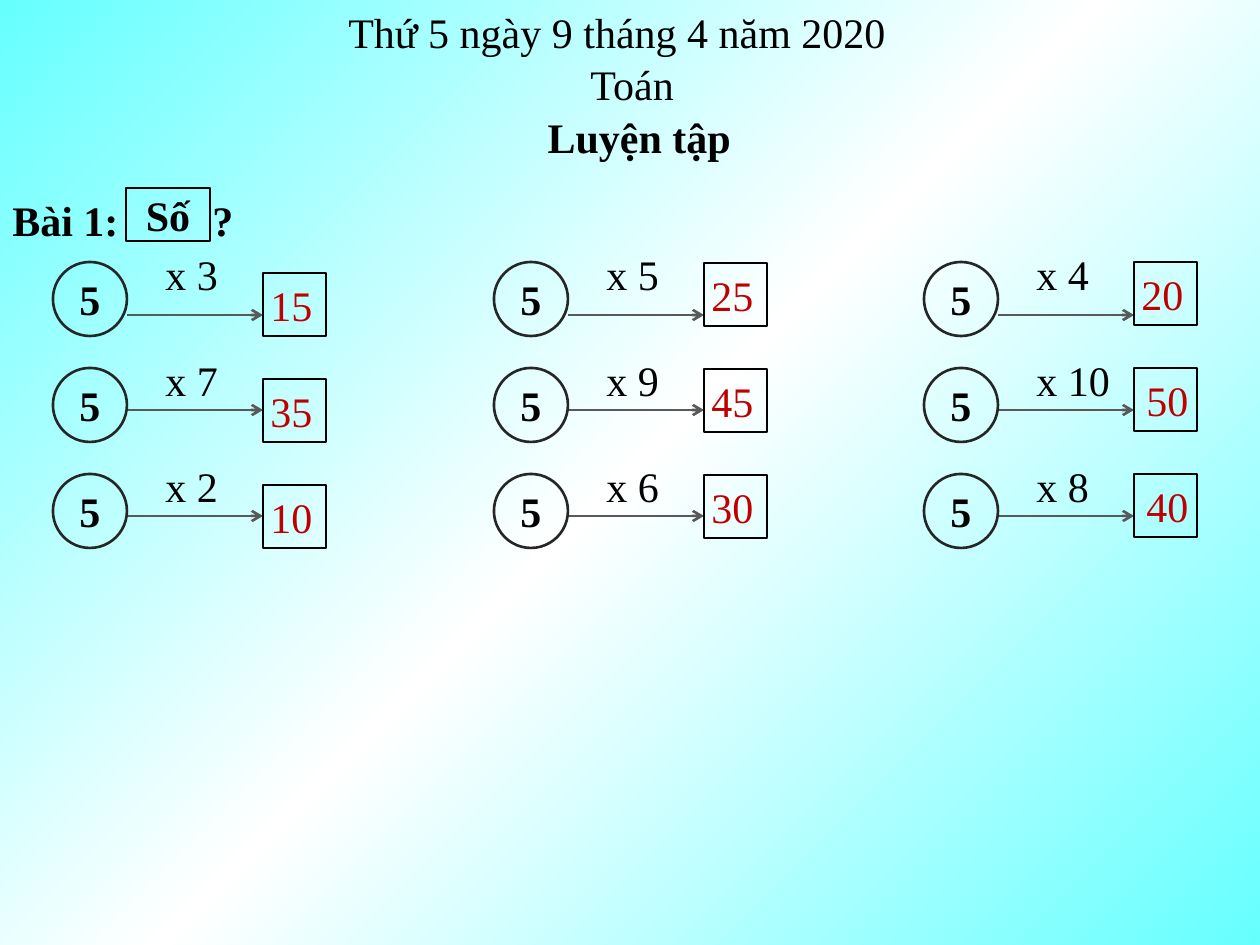
from copy import deepcopy

from lxml.etree import SubElement
from pptx import Presentation
from pptx.dml.color import RGBColor
from pptx.enum.shapes import MSO_CONNECTOR, MSO_SHAPE
from pptx.enum.text import MSO_ANCHOR, MSO_AUTO_SIZE, PP_ALIGN
from pptx.oxml.ns import qn
from pptx.util import Emu, Pt

PX = 914400 / 126


def px(*lengths):
    return [Emu(round(length * PX)) for length in lengths]


def write(shape, text, color="000000", bold=False, align=PP_ALIGN.LEFT,
          anchor=MSO_ANCHOR.TOP):
    frame = shape.text_frame
    frame.text = text
    frame.word_wrap = anchor == MSO_ANCHOR.MIDDLE
    frame.vertical_anchor = anchor
    paragraph = frame.paragraphs[0]
    paragraph.alignment = align
    font = paragraph.font
    font.name, font.size, font.bold = "Times New Roman", Pt(24), bold
    font.color.rgb = RGBColor.from_string(color)


prs = Presentation()
prs.slide_width, prs.slide_height = px(1260, 945)
slide = prs.slides.add_slide(prs.slide_layouts[5])
shapes = slide.shapes

# Diagonal background gradient
fill = slide.background.fill
fill.gradient()
fill.gradient_angle = 315
first_stop = slide.background._cSld.find(".//" + qn("a:gs"))
first_stop.addnext(deepcopy(first_stop))
for stop, position, color in zip(fill.gradient_stops, (0, 0.5, 1),
                                 ("66FFFF", "FFFFFF", "66FFFF")):
    stop.position = position
    stop.color.rgb = RGBColor.from_string(color)

# Heading: date, subject and lesson title
lesson = shapes.title
lesson.left, lesson.top, lesson.width, lesson.height = px(535, 105, 210, 63)
write(lesson, "Luyện tập", bold=True)
lesson.text_frame.auto_size = MSO_AUTO_SIZE.NONE
write(shapes.add_textbox(*px(336, 0, 567, 63)), "Thứ 5 ngày 9 tháng 4 năm 2020")
write(shapes.add_textbox(*px(578, 52, 110, 63)), "Toán")

# Exercise line, with a tab leaving room for the boxed word
exercise = shapes.add_textbox(*px(0, 188, 263, 63))
write(exercise, "Bài 1:\t?", bold=True)
tabs = SubElement(exercise.text_frame.paragraphs[0]._p.get_or_add_pPr(), qn("a:tabLst"))
SubElement(tabs, qn("a:tab"), pos=str(px(200)[0]), algn="l")
# Tab stops come before the default run properties
tabs.getparent().insert(0, tabs)

outlines = [(MSO_SHAPE.RECTANGLE, (126, 188, 84, 53), "000000", 1, "Số")]

# Grid of multiplications: start number, arrow, answer box
column_lefts = (53, 494, 924)
box_drops = (11, 1, 0)
arrow_drops = (53, 42, 42)
problems = (
    (("x 3", "15"), ("x 5", "25"), ("x 4", "20")),
    (("x 7", "35"), ("x 9", "45"), ("x 10", "50")),
    (("x 2", "10"), ("x 6", "30"), ("x 8", "40")),
)
for row, problem_row in enumerate(problems):
    top = 262 + 106 * row
    for column, (operation, answer) in enumerate(problem_row):
        left = column_lefts[column]
        box_left, box_top = left + 210, top + box_drops[column]
        outlines += [
            (MSO_SHAPE.OVAL, (left, top, 74, 74), "262626", 1.5, "5"),
            (MSO_SHAPE.RECTANGLE, (box_left, box_top, 63, 63), "000000", 1.5, ""),
        ]

        arrow_y = top + arrow_drops[row]
        arrow = shapes.add_connector(MSO_CONNECTOR.STRAIGHT,
                                     *px(left + 74, arrow_y, box_left, arrow_y))
        arrow.line.color.rgb = RGBColor.from_string("595959")
        arrow.line.width = Pt(1.5)
        SubElement(arrow.line._get_or_add_ln(), qn("a:tailEnd"), type="arrow")
        SubElement(arrow._element.spPr, qn("a:effectLst"))

        write(shapes.add_textbox(*px(left + 100, top - 20, 78 if len(operation) < 4 else 100, 63)),
              operation)
        # The last two answers of the right column sit further right
        answer_left = box_left if column == 2 and row > 0 else box_left - 5
        write(shapes.add_textbox(*px(answer_left, box_top, 68, 63)), answer, "C00000")

# Unfilled circles and boxes
for kind, bounds, color, weight, text in outlines:
    outline = shapes.add_shape(kind, *px(*bounds))
    outline.shadow.inherit = False
    outline.fill.background()
    outline.line.color.rgb = RGBColor.from_string(color)
    outline.line.width = Pt(weight)
    if text:
        write(outline, text, bold=True, align=PP_ALIGN.CENTER, anchor=MSO_ANCHOR.MIDDLE)

prs.save("out.pptx")
